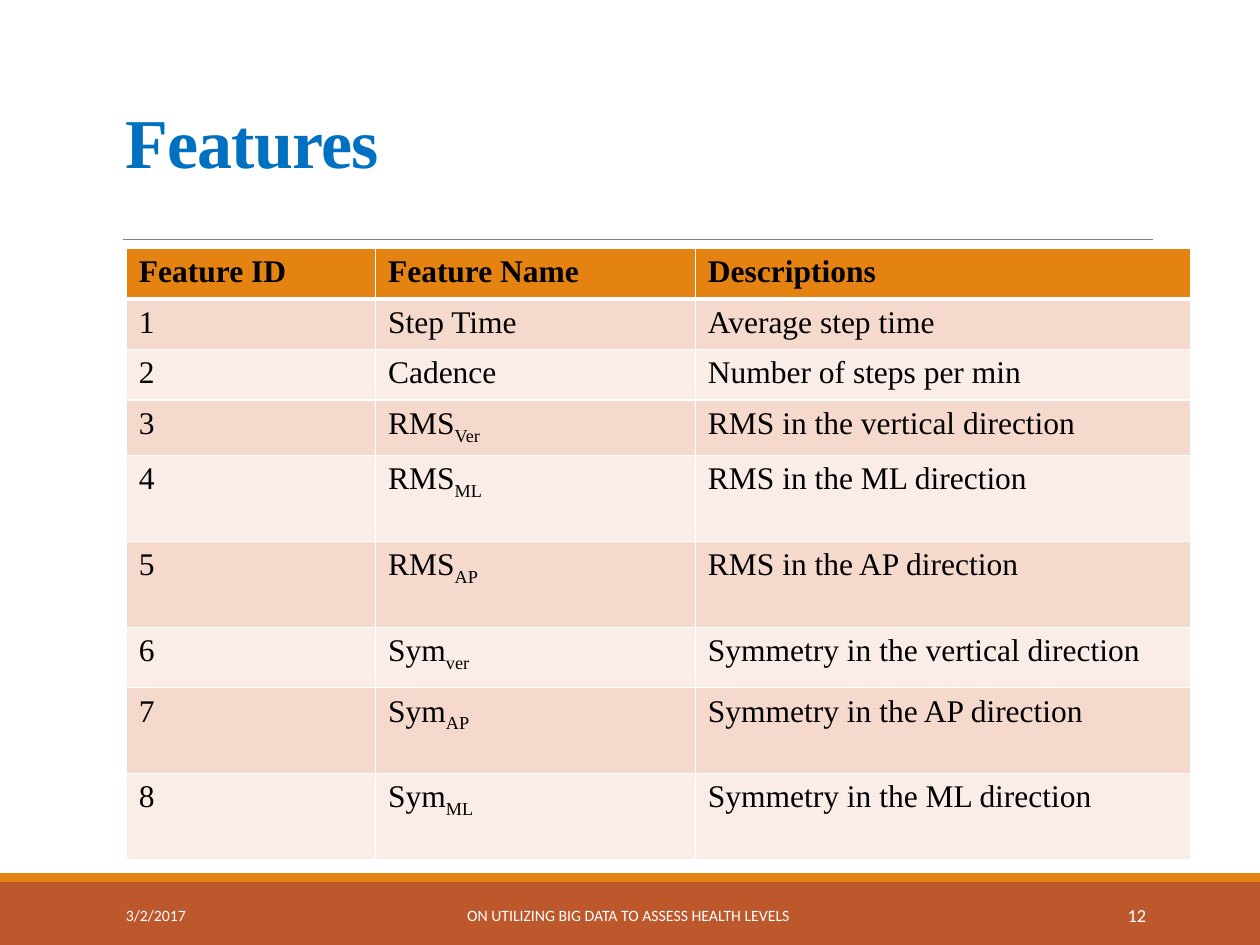
import pptx
import pptx.dml.color
import pptx.enum.shapes
import pptx.enum.text
import pptx.oxml
import pptx.oxml.ns
import pptx.util

Pt = pptx.util.Pt
ALIGN = pptx.enum.text.PP_ALIGN
ANCHOR = pptx.enum.text.MSO_ANCHOR
SERIF = "Times New Roman"
SANS = "Calibri"
WHITE = "FFFFFF"
ORANGE = "E48312"
RUST = "BD582C"
BANDS = ("F5D9CC", "FAEDE7")


def color(value):
    return pptx.dml.color.RGBColor.from_string(value)


class SlideBuilder:
    def __init__(self, slide):
        self.slide = slide

    def add_words(self, paragraph, text, font, size, ink, bold=False, **marks):
        run = paragraph.add_run()
        run.text = text
        values = {"name": font, "size": Pt(size), "bold": bold}
        for name, value in values.items():
            setattr(run.font, name, value)
        run.font.color.rgb = color(ink)
        for name, value in marks.items():
            run.font._element.set(name, str(value))

    def band(self, left, top, width, height, fill):
        bar = self.slide.shapes.add_shape(
            pptx.enum.shapes.MSO_SHAPE.RECTANGLE,
            Pt(left), Pt(top), Pt(width), Pt(height))
        bar.shadow.inherit = False
        bar.fill.solid()
        bar.fill.fore_color.rgb = color(fill)
        bar.line.fill.background()

    def rule(self, left, right, y, ink, width):
        line = self.slide.shapes.add_connector(
            pptx.enum.shapes.MSO_CONNECTOR.STRAIGHT,
            Pt(left), Pt(y), Pt(right), Pt(y))
        line.line.color.rgb = color(ink)
        line.line.width = Pt(width)
        line._element.spPr.append(pptx.oxml.parse_xml(
            f"<a:effectLst {pptx.oxml.ns.nsdecls('a')}/>"))

    def text(self, box, words, font, size, ink, align=ALIGN.LEFT,
             anchor=ANCHOR.MIDDLE, spacing=1.0, **style):
        frame = self.slide.shapes.add_textbox(*map(Pt, box)).text_frame
        frame.word_wrap = True
        frame.vertical_anchor = anchor
        paragraph = frame.paragraphs[0]
        paragraph.alignment = align
        paragraph.line_spacing = spacing
        self.add_words(paragraph, words, font, size, ink, **style)

    def borders(self, cell, **widths):
        properties = cell._tc.get_or_add_tcPr()
        for side in "LRTB":
            width = Pt(widths.get(side, 1))
            properties.append(pptx.oxml.parse_xml(
                f'<a:ln{side} {pptx.oxml.ns.nsdecls("a")} w="{width}">'
                f'<a:solidFill><a:srgbClr val="{WHITE}"/></a:solidFill>'
                f'</a:ln{side}>'))

    def table(self, left, top, widths, heights, rows):
        grid = self.slide.shapes.add_table(
            len(rows), len(widths), Pt(left), Pt(top),
            Pt(sum(widths)), Pt(sum(heights))).table
        grid.horz_banding = False
        for column, width in zip(grid.columns, widths):
            column.width = Pt(width)
        for index, (row, height, entries) in enumerate(
                zip(grid.rows, heights, rows)):
            row.height = Pt(height)
            header = index == 0
            edge = {0: {"B": 3}, 1: {"T": 3}}.get(index, {})
            for cell, entry in zip(row.cells, entries):
                self.borders(cell, **edge)
                cell.fill.solid()
                cell.fill.fore_color.rgb = color(
                    ORANGE if header else BANDS[(index - 1) % 2])
                base, _, subscript = entry.partition("_")
                paragraph = cell.text_frame.paragraphs[0]
                self.add_words(paragraph, base, SERIF, 18, "000000", header)
                if subscript:
                    self.add_words(paragraph, subscript, SERIF, 18, "000000",
                                   baseline=-25000)


def main():
    deck = pptx.Presentation()
    deck.slide_width, deck.slide_height = Pt(720), Pt(540)
    page = SlideBuilder(deck.slides.add_slide(deck.slide_layouts[6]))

    page.band(0, 504, 720, 36, RUST)
    page.band(0, 499, 720, 5, ORANGE)
    page.rule(70.5, 659, 136.8, "808080", 0.5)
    page.text((64.8, 22.3, 594, 85.7), "Features", SERIF, 40, "0070C0",
              anchor=ANCHOR.BOTTOM, spacing=0.85, bold=True, spc=-50)

    features = [
        ("Step Time", "Average step time"),
        ("Cadence", "Number of steps per min"),
        ("RMS_Ver", "RMS in the vertical direction"),
        ("RMS_ML", "RMS in the ML direction"),
        ("RMS_AP", "RMS in the AP direction"),
        ("Sym_ver", "Symmetry in the vertical direction"),
        ("Sym_AP", "Symmetry in the AP direction"),
        ("Sym_ML", "Symmetry in the ML direction"),
    ]
    rows = [("Feature ID", "Feature Name", "Descriptions")]
    rows += [(str(number), *feature)
             for number, feature in enumerate(features, 1)]
    short, tall = 28.1, 49.1
    heights = [short] * 4 + [tall] * 2 + [34.5] + [tall] * 2
    page.table(72.2, 142, (142.4, 182.8, 283), heights, rows)

    footer_top, footer_height = 508.6, 28.8
    for left, width, words, size, align in (
            (64.8, 146, "3/2/2017", 9, ALIGN.LEFT),
            (217.5, 285, "ON UTILIZING BIG DATA TO ASSESS HEALTH LEVELS ",
             9, ALIGN.CENTER),
            (584.6, 77.5, "12", 10.5, ALIGN.RIGHT)):
        page.text((left, footer_top, width, footer_height), words, SANS,
                  size, WHITE, align)

    deck.save("out.pptx")


if __name__ == "__main__":
    main()
